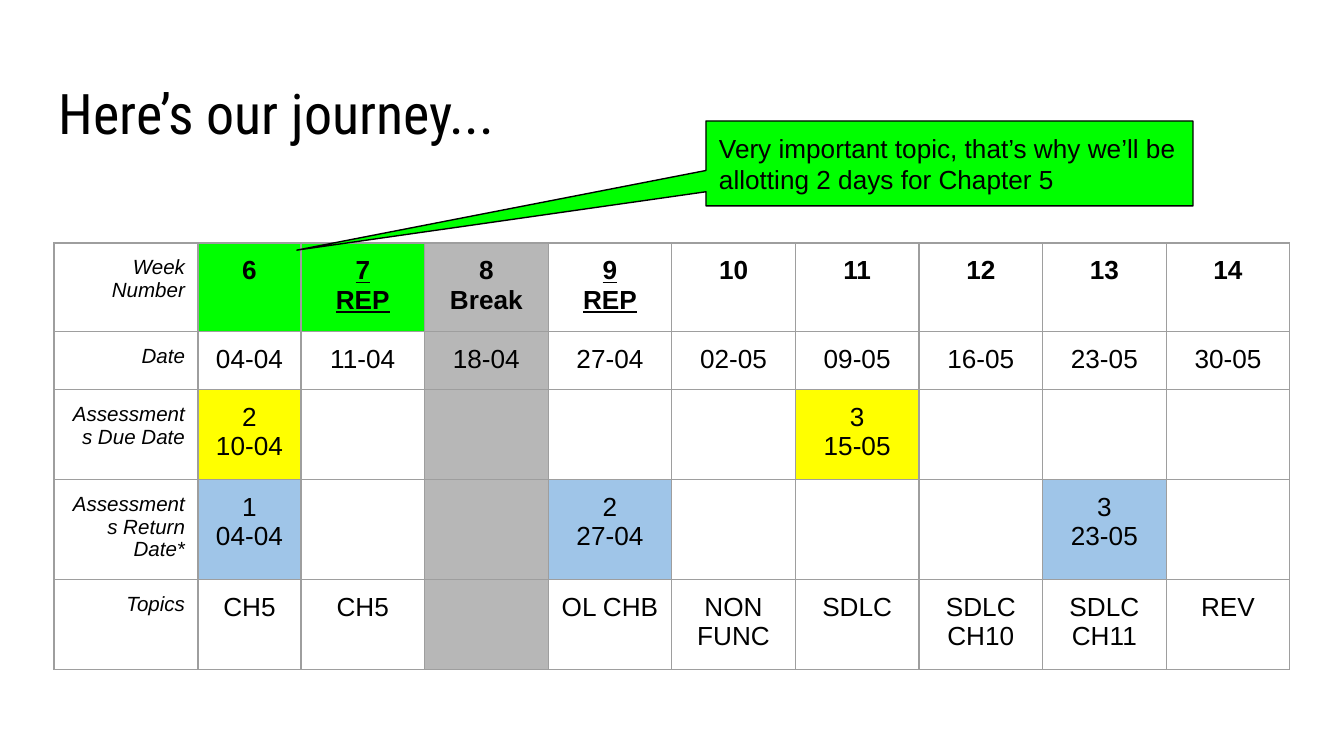
"""Build the course journey slide: a week-by-week schedule with a callout."""
from dataclasses import dataclass

from lxml.etree import SubElement
from pptx import Presentation
from pptx.dml.color import RGBColor
from pptx.enum.shapes import MSO_SHAPE
from pptx.enum.text import MSO_ANCHOR, PP_ALIGN
from pptx.oxml.ns import qn
from pptx.util import Emu, Pt


@dataclass(frozen=True)
class Theme:
    ink: str = "000000"
    grid: str = "9E9E9E"
    green: str = "00FF00"
    gray: str = "B7B7B7"
    yellow: str = "FFFF00"
    blue: str = "9FC5E8"
    title_font: str = "Roboto Condensed"
    body_font: str = "Arial"
    title_size: int = 30
    body_size: int = 14
    label_size: int = 11
    line_width: float = 0.75


theme = Theme()
SLIDE_WIDTH = 1344
INSET = 13


def px(count):
    return Emu(round(count * 9144000 / SLIDE_WIDTH))


def style_text(frame, font_name, size, align=PP_ALIGN.LEFT, bold=False, italic=False, underline=False):
    frame.word_wrap = True
    frame.margin_left = frame.margin_right = frame.margin_top = frame.margin_bottom = px(INSET)
    for paragraph in frame.paragraphs:
        paragraph.alignment = align
        font = paragraph.font
        font.name, font.size = font_name, Pt(size)
        font.bold, font.italic, font.underline = bold, italic, underline
        font.color.rgb = RGBColor.from_string(theme.ink)


journey = Presentation()
journey.slide_width, journey.slide_height = px(SLIDE_WIDTH), px(756)
slide = journey.slides.add_slide(journey.slide_layouts[6])

heading = slide.shapes.add_textbox(px(46), px(66), px(1252), px(85)).text_frame
heading.text = "Here’s our journey..."
style_text(heading, theme.title_font, theme.title_size)

weeks = [
    ["Week Number", "6", "7\nREP", "8\nBreak", "9\nREP", "10", "11", "12", "13", "14"],
    ["Date", "04-04", "11-04", "18-04", "27-04", "02-05", "09-05", "16-05", "23-05", "30-05"],
    ["Assessments Due Date", "2\n10-04", "", "", "", "", "3\n15-05", "", "", ""],
    ["Assessments Return Date*", "1\n04-04", "", "", "2\n27-04", "", "", "", "3\n23-05", ""],
    ["Topics", "CH5", "CH5", "", "OL CHB", "NON\nFUNC", "SDLC", "SDLC\nCH10", "SDLC\nCH11", "REV"],
]
row_heights = [86, 58, 90, 96, 90]
label_width, first_week_width, other_weeks_width = 144, 103, 989
other_week_count = len(weeks[0]) - 2
column_widths = [label_width, first_week_width] + [other_weeks_width / other_week_count] * other_week_count
break_column = 3
highlights = {
    (0, 1): theme.green, (0, 2): theme.green,
    (2, 1): theme.yellow, (2, 6): theme.yellow,
    (3, 1): theme.blue, (3, 4): theme.blue, (3, 8): theme.blue,
}

schedule = slide.shapes.add_table(
    len(weeks), len(column_widths), px(54), px(243), px(sum(column_widths)), px(sum(row_heights))
).table
schedule.first_row = schedule.horz_banding = False
for column, width in zip(schedule.columns, column_widths):
    column.width = px(width)
for row, height in zip(schedule.rows, row_heights):
    row.height = px(height)

for row_index, entries in enumerate(weeks):
    for column_index, entry in enumerate(entries):
        cell = schedule.cell(row_index, column_index)
        cell.margin_left = cell.margin_right = cell.margin_top = cell.margin_bottom = px(INSET)
        properties = cell._tc.get_or_add_tcPr()
        for side in ("lnL", "lnR", "lnT", "lnB"):
            border = SubElement(properties, qn(f"a:{side}"), w=str(Pt(theme.line_width)))
            SubElement(SubElement(border, qn("a:solidFill")), qn("a:srgbClr"), val=theme.grid)
        color = theme.gray if column_index == break_column else highlights.get((row_index, column_index))
        if color:
            cell.fill.solid()
            cell.fill.fore_color.rgb = RGBColor.from_string(color)
        else:
            cell.fill.background()
        cell.text_frame.text = entry
        if column_index == 0:
            style_text(cell.text_frame, theme.body_font, theme.label_size, PP_ALIGN.RIGHT, italic=True)
        else:
            style_text(cell.text_frame, theme.body_font, theme.body_size, PP_ALIGN.CENTER,
                       bold=row_index == 0, underline="REP" in entry)

callout = slide.shapes.add_shape(
    MSO_SHAPE.ROUNDED_RECTANGULAR_CALLOUT, px(706), px(121), px(487), px(85)
)
callout.adjustments[0], callout.adjustments[1], callout.adjustments[2] = -1.34, 1.02, 0
callout.shadow.inherit = False
callout.fill.solid()
callout.fill.fore_color.rgb = RGBColor.from_string(theme.green)
callout.line.color.rgb = RGBColor.from_string(theme.ink)
callout.line.width = Pt(theme.line_width)
callout.text_frame.text = "Very important topic, that’s why we’ll be allotting 2 days for Chapter 5"
callout.text_frame.vertical_anchor = MSO_ANCHOR.MIDDLE
style_text(callout.text_frame, theme.body_font, theme.body_size)

journey.save("out.pptx")
